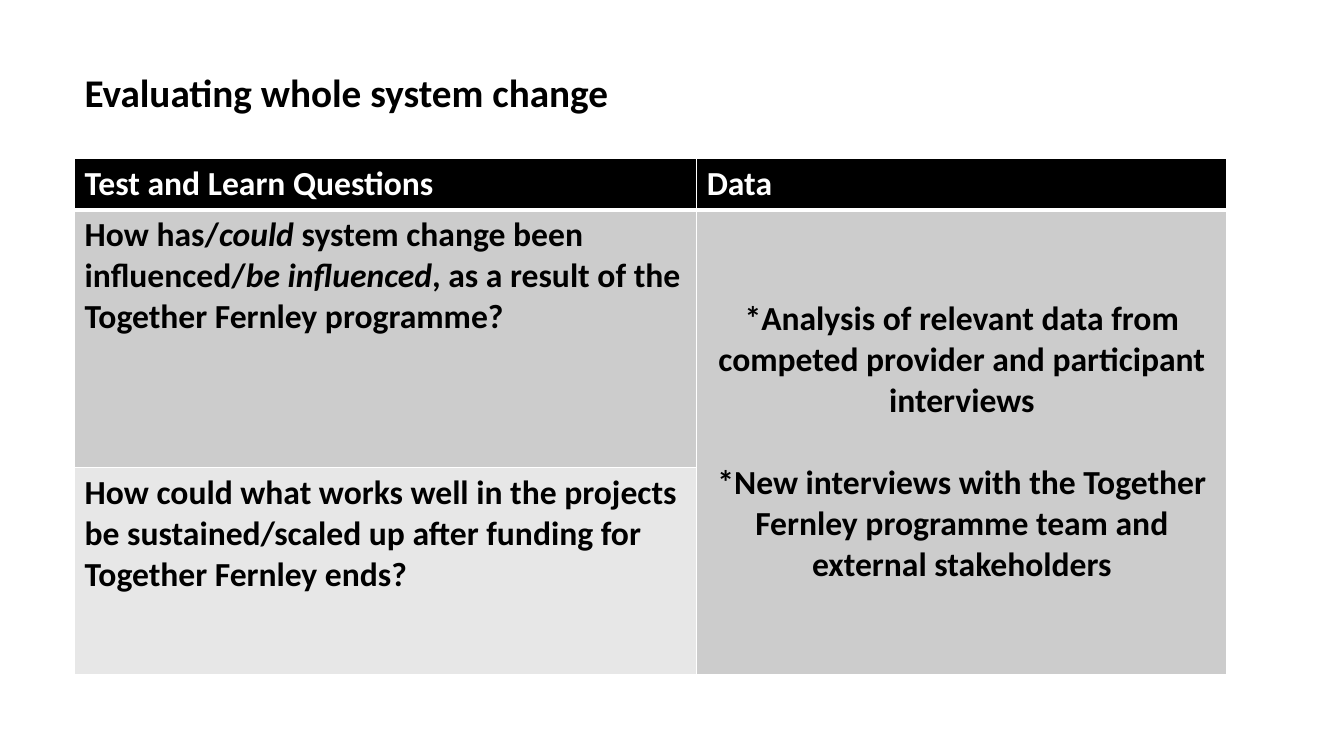
from pptx import Presentation
from pptx.dml.color import RGBColor
from pptx.enum.text import MSO_ANCHOR, PP_ALIGN
from pptx.oxml import parse_xml
from pptx.oxml.ns import nsdecls
from pptx.util import Inches, Pt

BLACK = RGBColor(0x00, 0x00, 0x00)
WHITE = RGBColor(0xFF, 0xFF, 0xFF)
GREY = RGBColor(0xCC, 0xCC, 0xCC)
LIGHT = RGBColor(0xE7, 0xE7, 0xE7)


def add_run(p, text, size, color, italic=False):
    r = p.add_run()
    r.text = text
    fmt = {"name": "Calibri", "size": Pt(size), "bold": True, "italic": italic}
    for key, value in fmt.items():
        setattr(r.font, key, value)
    r.font.color.rgb = color


def add_border(cell, side, width):
    cell._tc.get_or_add_tcPr().append(parse_xml(
        f'<a:{side} {nsdecls("a")} w="{Pt(width)}"><a:solidFill>'
        f'<a:srgbClr val="{WHITE}"/></a:solidFill></a:{side}>'))


prs = Presentation()
prs.slide_width, prs.slide_height = Inches(13.33), Inches(7.5)
s = prs.slides.add_slide(prs.slide_layouts[6])

# Title
tf = s.shapes.add_textbox(Inches(0.74), Inches(0.22), Inches(11.77), Inches(1.45)).text_frame
tf.word_wrap = True
tf.vertical_anchor = MSO_ANCHOR.MIDDLE
tf.paragraphs[0].line_spacing = 0.9
add_run(tf.paragraphs[0], "Evaluating whole system change", 28, BLACK)

# Table grid
widths, heights = [6.17, 5.26], [0.51, 2.56, 2.05]
table = s.shapes.add_table(3, 2, Inches(0.74), Inches(1.57),
                           Inches(sum(widths)), Inches(sum(heights))).table
for col, width in zip(table.columns, widths):
    col.width = Inches(width)
for row, height in zip(table.rows, heights):
    row.height = Inches(height)

# Fills and borders, with a thick line under the header
fills = [(BLACK, BLACK), (GREY, GREY), (LIGHT, GREY)]
for i, row_fills in enumerate(fills):
    for j, color in enumerate(row_fills):
        cell = table.cell(i, j)
        for side in ("lnL", "lnR", "lnT", "lnB"):
            thick = (i, side) in [(0, "lnB"), (1, "lnT")]
            add_border(cell, side, 3 if thick else 1)
        cell.fill.solid()
        cell.fill.fore_color.rgb = color

# Header and questions: each text is a list of (words, italic)
texts = {
    (0, 0): [("Test and Learn Questions", False)],
    (0, 1): [("Data", False)],
    (1, 0): [("How has/", False), ("could", True),
             (" system change been influenced/", False), ("be influenced", True),
             (", as a result of the Together Fernley programme?", False)],
    (2, 0): [("How could what works well in the projects be sustained/scaled up "
              "after funding for Together Fernley ends?", False)],
}
for (i, j), parts in texts.items():
    for words, italic in parts:
        add_run(table.cell(i, j).text_frame.paragraphs[0], words, 24,
                WHITE if i == 0 else BLACK, italic)

# Data sources, in one cell across both questions
data = table.cell(1, 1)
data.merge(table.cell(2, 1))
data.vertical_anchor = MSO_ANCHOR.MIDDLE
tf = data.text_frame
sources = [
    "*Analysis of relevant data from competed provider and participant interviews",
    "*New interviews with the Together Fernley programme team and external stakeholders",
]
for n, source in enumerate(sources):
    p = tf.add_paragraph() if n else tf.paragraphs[0]
    p.alignment = PP_ALIGN.CENTER
    p.space_before = Pt(29 if n else 0)
    add_run(p, source, 24, BLACK)

prs.save("out.pptx")
